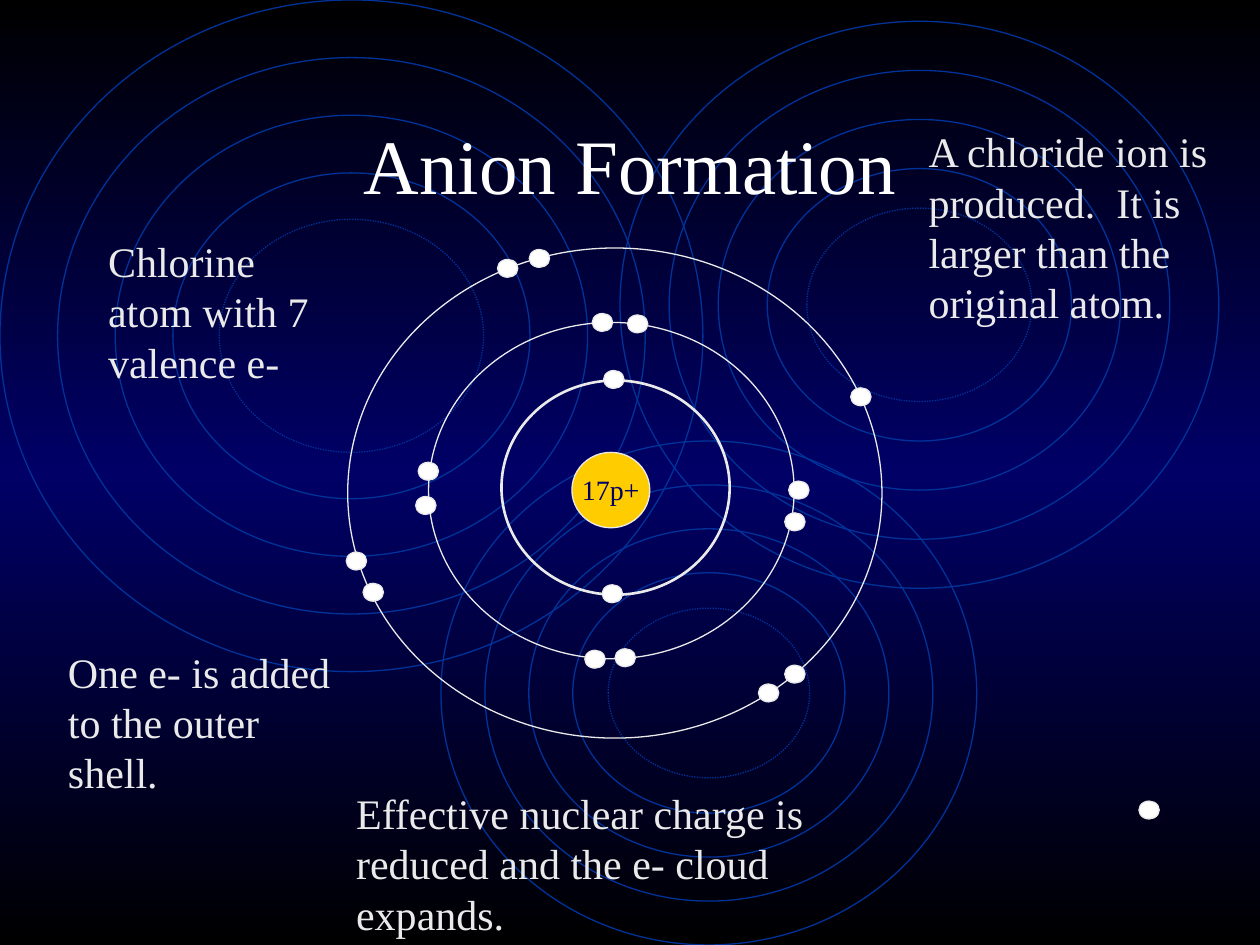
from copy import deepcopy

from pptx import Presentation
from pptx import util as u
from pptx.dml.color import RGBColor
from pptx.enum import dml, shapes, text
from pptx.oxml.ns import qn

BLACK = RGBColor(0x00, 0x00, 0x00)
NAVY = RGBColor(0x00, 0x00, 0x66)
RIPPLE_BLUE = RGBColor(0x00, 0x33, 0x99)
WHITE = RGBColor(0xFF, 0xFF, 0xFF)
PALE = RGBColor(0xEA, 0xEA, 0xEA)
GOLD = RGBColor(0xFF, 0xCC, 0x00)
FONT = "Times New Roman"

# All places are left, top, width, height in centimetres.
TITLE = ("Anion Formation", (1.91, 1.7, 21.59, 3.18))
NOTES = [
    ("Chlorine atom with 7 valence e-", (1.93, 4.62, 5.13, 3.3)),
    ("One e- is added to the outer shell.", (1.12, 12.9, 6.1, 3.3)),
    ("Effective nuclear charge is reduced and the e- cloud expands.",
     (6.93, 15.75, 9.93, 3.3)),
    ("A chloride ion is produced.  It is larger than the original atom.",
     (18.47, 2.41, 6.93, 4.32)),
]
NUCLEUS = (11.53, 9.12, 1.57, 1.52)
PROTONS = ("17p+", (11.48, 9.4, 1.7, 0.94))

RIPPLES = [
    (0, 0, 14.17, 13.54),
    (8.89, 8.89, 10.8, 10.16),
    (12.5, 0.43, 12.07, 11.43),
]
RIPPLE_INSETS = (0, 0.082, 0.164, 0.246, 0.312)  # share of the outer width

# Each shell: ring, line width in points, left and top of its electrons
SHELLS = [
    ((10.11, 7.67, 4.6, 4.32), 1.5, [(12.17, 7.47), (12.14, 11.79)]),
    ((8.64, 6.5, 7.37, 6.78), 0.75,
     [(15.9, 9.7), (15.82, 10.34), (11.94, 6.32), (12.65, 6.35),
      (8.43, 9.32), (8.38, 10.01), (11.79, 13.11), (12.4, 13.08)]),
    ((7.01, 5, 10.77, 9.88), 0.75,
     [(17.15, 7.82), (15.82, 13.41), (15.29, 13.79), (10.67, 5.03),
      (10.03, 5.23), (7.32, 11.76), (6.98, 11.13)]),
]
ADDED_ELECTRON = (22.96, 16.15)
ELECTRON_SIZE = (0.41, 0.36)


def lengths(place):
    return [u.Cm(value) for value in place]


def paint_background(page):
    fill = page.background.fill
    fill.gradient()
    fill.gradient_angle = 90
    stop_list = page.element.find(".//" + qn("a:gsLst"))
    stop_list.append(deepcopy(stop_list[-1]))
    for stop, color, position in zip(fill.gradient_stops,
                                     (BLACK, NAVY, BLACK), (0, 0.5, 1)):
        stop.color.rgb = color
        stop.position = position


def add_ellipse(page, place, line, fill=None, width=0.75, dash=None):
    ellipse = page.shapes.add_shape(shapes.MSO_SHAPE.OVAL, *lengths(place))
    ellipse.shadow.inherit = False
    if fill is None:
        ellipse.fill.background()
    else:
        ellipse.fill.solid()
        ellipse.fill.fore_color.rgb = fill
    ellipse.line.color.rgb = line
    ellipse.line.width = u.Pt(width)
    if dash is not None:
        ellipse.line.dash_style = dash


def write(box, words, size, color, **para_format):
    box.text_frame.text = words
    para = box.text_frame.paragraphs[0]
    for name, value in para_format.items():
        setattr(para, name, value)
    span = para.runs[0]
    for name, value in {"name": FONT, "size": u.Pt(size)}.items():
        setattr(span.font, name, value)
    span.font.color.rgb = color


def add_text(page, words, place, size, color, wrap=True):
    box = page.shapes.add_textbox(*lengths(place))
    box.text_frame.word_wrap = wrap
    write(box, words, size, color)


def add_ripples(page):
    for left, top, width, height in RIPPLES:
        for share in RIPPLE_INSETS:
            inset = share * width
            innermost = share == RIPPLE_INSETS[-1]
            place = (left + inset, top + inset,
                     width - 2 * inset, height - 2 * inset)
            add_ellipse(page, place, RIPPLE_BLUE,
                        dash=dml.MSO_LINE.ROUND_DOT if innermost else None)


def add_atom(page):
    add_ellipse(page, NUCLEUS, PALE, GOLD)
    add_text(page, *PROTONS, 16, NAVY, wrap=False)
    for ring, width, _ in SHELLS:
        add_ellipse(page, ring, PALE, width=width)
    electrons = [spot for _, _, spots in SHELLS for spot in spots]
    for spot in electrons + [ADDED_ELECTRON]:
        add_ellipse(page, spot + ELECTRON_SIZE, PALE, WHITE)


def place_title(page):
    words, place = TITLE
    title = page.shapes.title
    title.left, title.top, title.width, title.height = lengths(place)
    title.text_frame.vertical_anchor = text.MSO_ANCHOR.MIDDLE
    write(title, words, 44, WHITE, alignment=text.PP_ALIGN.CENTER)
    page.shapes.element.append(title.element)  # in front of the ripples


def main():
    deck = Presentation()
    deck.slide_width, deck.slide_height = u.Cm(25.4), u.Cm(19.05)
    page = deck.slides.add_slide(deck.slide_layouts[5])
    paint_background(page)
    add_ripples(page)
    place_title(page)
    add_atom(page)
    for words, place in NOTES:
        add_text(page, words, place, 24, PALE)
    deck.save("out.pptx")


if __name__ == "__main__":
    main()
